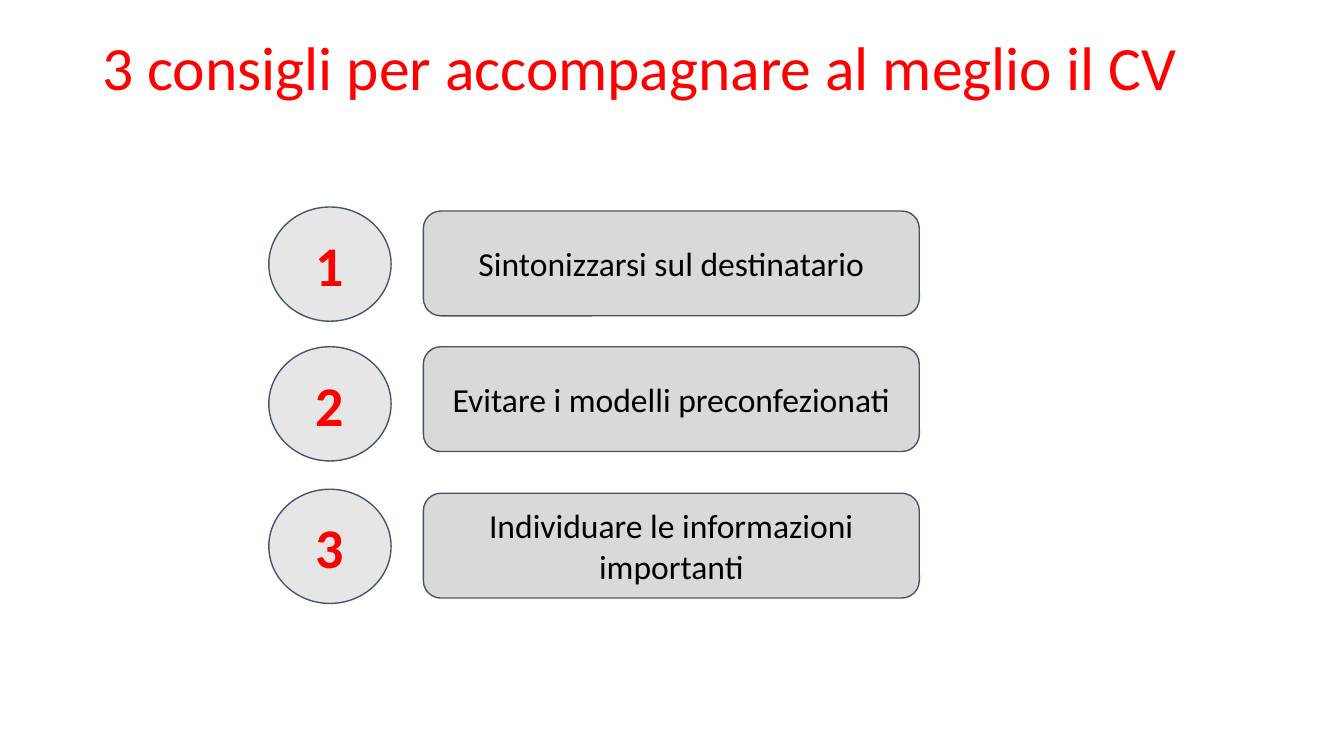
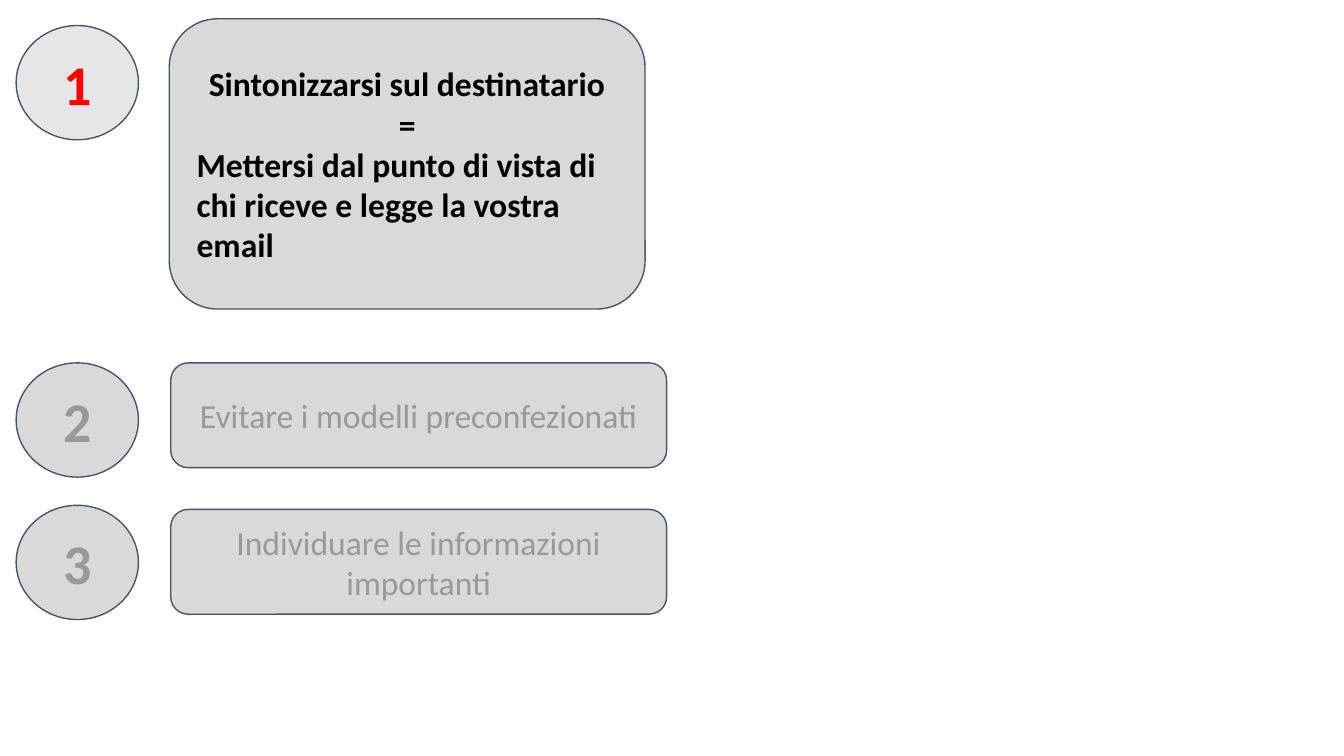
from pptx import Presentation
from pptx.dml.color import RGBColor
from pptx.enum.shapes import MSO_SHAPE
from pptx.enum.text import MSO_ANCHOR, MSO_AUTO_SIZE, PP_ALIGN
from pptx.util import Emu, Pt

ELLIPSE, ROUNDED = MSO_SHAPE.OVAL, MSO_SHAPE.ROUNDED_RECTANGLE
LEFT, CENTER = PP_ALIGN.LEFT, PP_ALIGN.CENTER
MIDDLE = MSO_ANCHOR.MIDDLE
NO_AUTOFIT = MSO_AUTO_SIZE.NONE

# Shared style; 100 px to the inch
PX = 9144
SLIDE_W = 1000
FONT = "Calibri"
RED = RGBColor(0xFF, 0x00, 0x00)
BLACK = RGBColor(0x00, 0x00, 0x00)
MUTED = RGBColor(0x99, 0x99, 0x99)
CARD_GREY = RGBColor(0xD9, 0xD9, 0xD9)
BADGE_GREY = RGBColor(0xE7, 0xE6, 0xE6)
OUTLINE = RGBColor(0x44, 0x54, 0x6A)

TITLE_ONLY, BLANK = 5, 6
BADGE_W, BADGE_H = 91, 85
CARD_W, CARD_H = 369, 78
CARD_OFFSET = 115

# Number, advice, badge top and card top within the list
STEPS = [
    ("1", "Sintonizzarsi sul destinatario", 0, 3),
    ("2", "Evitare i modelli preconfezionati", 104, 104),
    ("3", "Individuare le informazioni importanti", 210, 213),
]


def px(*lengths):
    return [Emu(length * PX) for length in lengths]


def write(shape, *lines, size=18, color=BLACK, bold=False, inset=10,
          aligns=(CENTER,), spacing=None):
    """Fill a shape with one paragraph a line; the last alignment carries on."""
    frame = shape.text_frame
    frame.word_wrap = True
    frame.auto_size = NO_AUTOFIT
    frame.vertical_anchor = MIDDLE
    frame.margin_left, frame.margin_top, frame.margin_right, frame.margin_bottom = px(*[inset] * 4)
    for index, line in enumerate(lines):
        paragraph = frame.paragraphs[0] if index == 0 else frame.add_paragraph()
        paragraph.alignment = aligns[min(index, len(aligns) - 1)]
        if spacing:
            paragraph.line_spacing = spacing
        run = paragraph.add_run()
        run.text = line
        run.font.name = FONT
        run.font.size = Pt(size)
        run.font.bold = bold
        run.font.color.rgb = color


def outlined(slide, kind, box, fill):
    shape = slide.shapes.add_shape(kind, *px(*box))
    shape.shadow.inherit = False
    shape.fill.solid()
    shape.fill.fore_color.rgb = fill
    shape.line.color.rgb = OUTLINE
    shape.line.width = Pt(0.75)
    return shape


def add_badge(slide, left, top, number, muted=False):
    badge = outlined(slide, ELLIPSE, (left, top, BADGE_W, BADGE_H),
                     CARD_GREY if muted else BADGE_GREY)
    write(badge, number, size=30, bold=True, color=MUTED if muted else RED)


def add_card(slide, box, *lines, **text_format):
    write(outlined(slide, ROUNDED, box, CARD_GREY), *lines, **text_format)


def add_steps(slide, left, top, steps, muted=False):
    for _, advice, _, card_top in steps:
        add_card(slide, (left + CARD_OFFSET, top + card_top, CARD_W, CARD_H),
                 advice, color=MUTED if muted else BLACK)
    for number, _, badge_top, _ in steps:
        add_badge(slide, left, top + badge_top, number, muted)


def add_title(slide, box, text):
    title = slide.shapes.title
    title.left, title.top, title.width, title.height = px(*box)
    write(title, text, size=33, color=RED, inset=7, aligns=(LEFT,), spacing=0.9)


def overview_slide(deck):
    slide = deck.slides.add_slide(deck.slide_layouts[TITLE_ONLY])
    add_title(slide, (69, 30, 862, 45), "3 consigli per accompagnare al meglio il CV")
    add_steps(slide, 200, 154, STEPS)


def first_step_slide(deck):
    slide = deck.slides.add_slide(deck.slide_layouts[BLANK])
    number, advice, *_ = STEPS[0]
    # Step in focus, with its explanation
    add_card(slide, (126, 14, 354, 216), advice, "=",
             "Mettersi dal punto di vista di chi riceve e legge la vostra email",
             bold=True, aligns=(CENTER, CENTER, LEFT))
    add_badge(slide, 12, 19, number)
    # Steps still to come
    add_steps(slide, 12, 166, STEPS[1:], muted=True)


def main():
    deck = Presentation()
    # 16:9 page
    deck.slide_width = Emu(SLIDE_W * PX)
    deck.slide_height = Emu(SLIDE_W * PX * 9 // 16)
    overview_slide(deck)
    first_step_slide(deck)
    deck.save("out.pptx")


if __name__ == "__main__":
    main()
